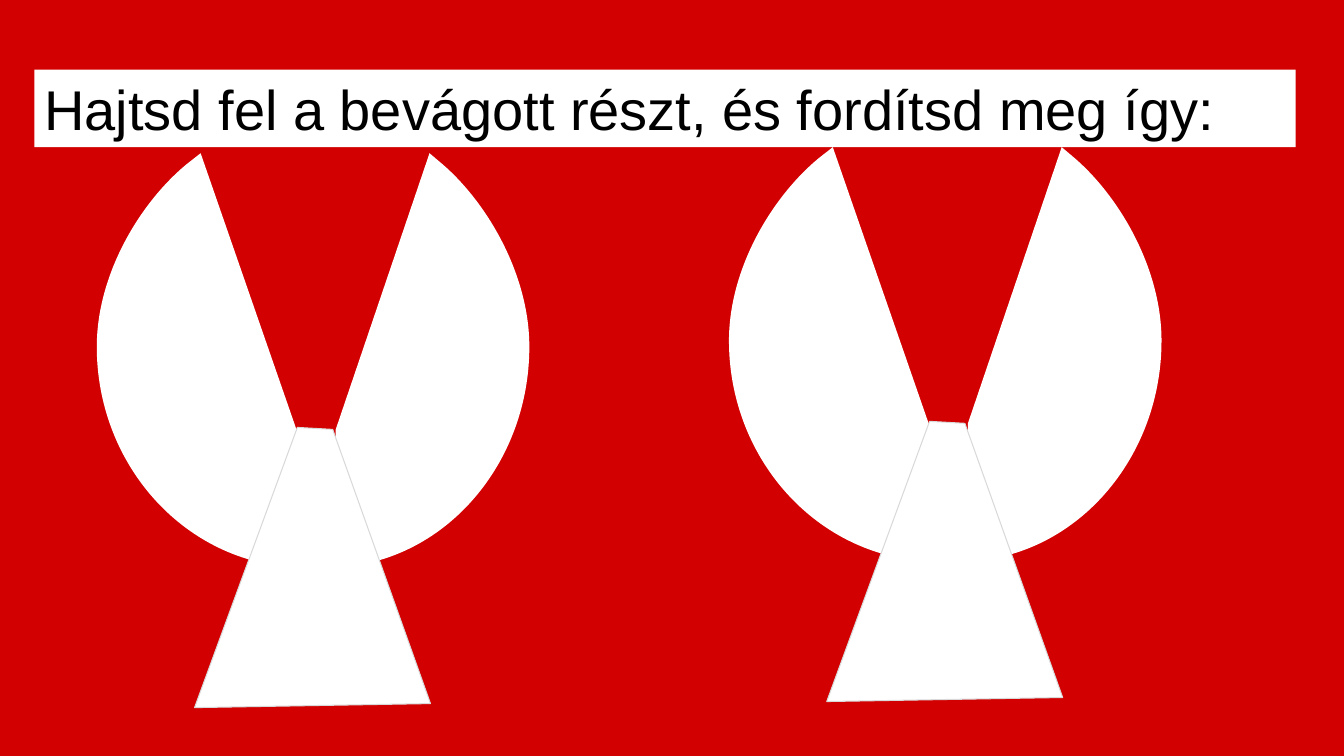
import pptx
import pptx.dml.color
import pptx.enum.text
import pptx.oxml.ns
import pptx.util
from lxml import etree
from pptx.util import Inches

COLORS = {"red": "D20000", "white": "FFFFFF", "black": "000000", "fold": "D9D9D9"}

# Wings: a straight cut edge, then two curves of three points each
LEFT_WING = [(2.95, 5.63), (2.94, 4.26), (1.99, 1.52), (1.85, 1.63),
             (1.38, 2.02), (0.96, 2.73), (0.96, 3.44),
             (0.96, 4.57), (1.77, 5.51), (2.82, 5.62)]
RIGHT_WING = [(3.33, 5.63), (3.33, 4.26), (4.26, 1.52), (4.39, 1.63),
              (4.84, 2.02), (5.25, 2.73), (5.25, 3.44),
              (5.25, 4.57), (4.46, 5.51), (3.45, 5.62)]
FLAP = [(2.95, 4.24), (3.3, 4.26), (4.27, 6.98), (1.93, 7.02)]
ANGEL_OFFSETS = [(0, 0), (6.27, -0.06)]


def rgb(name):
    return pptx.dml.color.RGBColor.from_string(COLORS[name])


def paint(fill, name):
    fill.solid()
    fill.fore_color.rgb = rgb(name)


def add_outline(slide, points, offset):
    moved = [(Inches(x + offset[0]), Inches(y + offset[1])) for x, y in points]
    builder = slide.shapes.build_freeform(*moved[0])
    builder.add_line_segments(moved[1:], close=True)
    shape = builder.convert_to_shape()
    shape.shadow.inherit = False
    paint(shape.fill, "white")
    shape.line.fill.background()
    return shape


def add_wing(slide, points, offset):
    shape = add_outline(slide, points, offset)
    # Turn the last six straight segments into two Bezier curves
    segments = shape.element.xpath(".//a:lnTo")[3:9]
    for start in (0, 3):
        curve = etree.Element(pptx.oxml.ns.qn("a:cubicBezTo"))
        segments[start].addprevious(curve)
        for segment in segments[start:start + 3]:
            curve.append(segment[0])
            segment.getparent().remove(segment)


def add_flap(slide, offset):
    shape = add_outline(slide, FLAP, offset)
    paint(shape.line.fill, "fold")
    shape.line.width = pptx.util.Pt(0.75)


def add_angel(slide, offset):
    add_wing(slide, LEFT_WING, offset)
    add_wing(slide, RIGHT_WING, offset)
    add_flap(slide, offset)


def set_title(slide, text):
    title = slide.shapes.title
    title.left, title.top = Inches(0.34), Inches(0.69)
    title.width, title.height = Inches(12.51), Inches(0.77)
    paint(title.fill, "white")
    frame = title.text_frame
    frame.text = text
    frame.word_wrap = True
    frame.auto_size = pptx.enum.text.MSO_AUTO_SIZE.NONE
    frame.vertical_anchor = pptx.enum.text.MSO_ANCHOR.TOP
    paragraph = frame.paragraphs[0]
    paragraph.alignment = pptx.enum.text.PP_ALIGN.LEFT
    font = paragraph.runs[0].font
    font.name = "Arial"
    font.size = pptx.util.Pt(40)
    font.color.rgb = rgb("black")


def main():
    presentation = pptx.Presentation()
    presentation.slide_width = Inches(13.33)
    presentation.slide_height = Inches(7.5)
    slide = presentation.slides.add_slide(presentation.slide_layouts[5])
    paint(slide.background.fill, "red")

    # Instruction
    set_title(slide, "Hajtsd fel a bevágott részt, és fordítsd meg így:")

    # Two folded angels side by side
    for offset in ANGEL_OFFSETS:
        add_angel(slide, offset)

    presentation.save("out.pptx")


if __name__ == "__main__":
    main()
